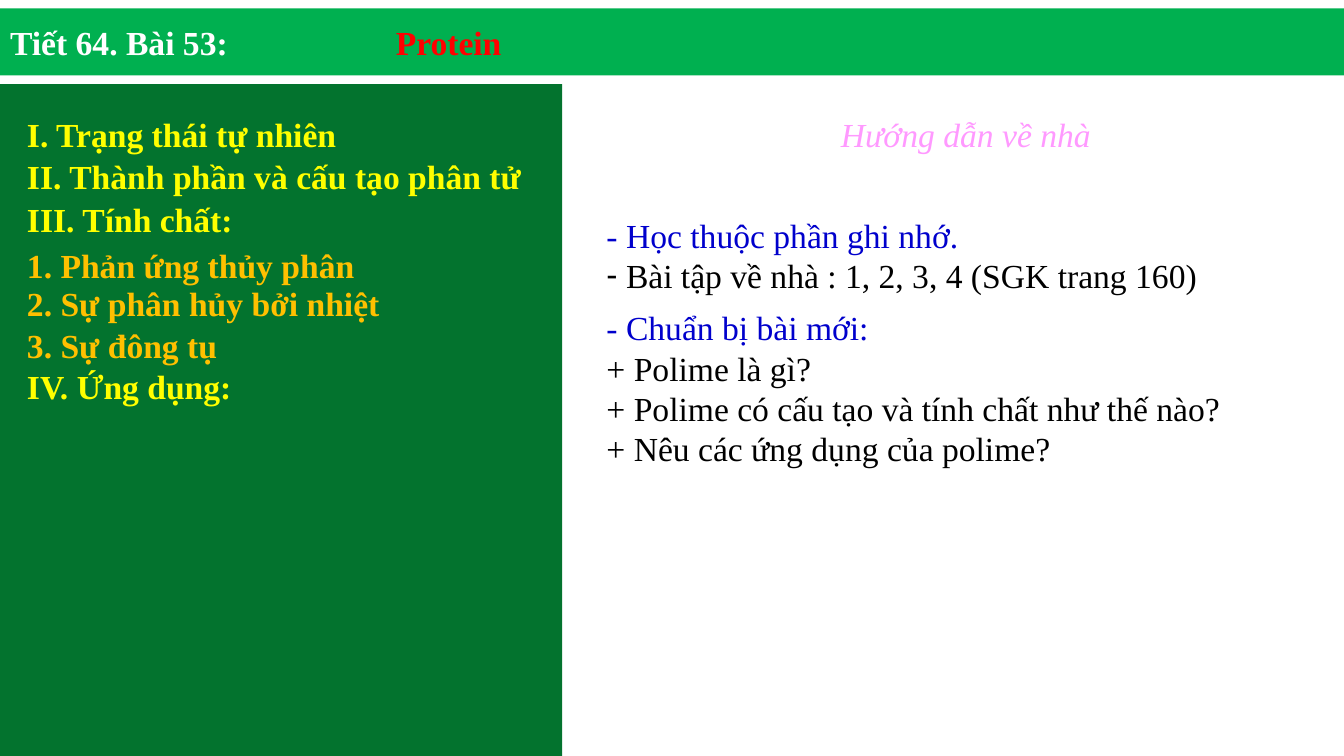
from dataclasses import dataclass
from lxml.etree import SubElement
from pptx import Presentation
from pptx.dml.color import RGBColor
from pptx.enum.text import MSO_ANCHOR, MSO_AUTO_SIZE, PP_ALIGN
from pptx.oxml import parse_xml
from pptx.oxml.ns import qn
from pptx.util import Cm, Pt


@dataclass(frozen=True)
class Theme:
    font: str = "Times New Roman"
    size: float = 24
    pitch: float = 28.8
    bar: str = "00B050"
    panel: str = "03732E"
    white: str = "FFFFFF"
    red: str = "FF0000"
    yellow: str = "FFFF00"
    amber: str = "FFC000"
    pink: str = "FF99FF"
    rose: str = "FF0066"
    blue: str = "0000CC"
    black: str = "000000"


THEME = Theme()

# Text, colour, distance in points from the line above
TOPICS = [
    ("I. Trạng thái tự nhiên", THEME.yellow, THEME.pitch),
    ("II. Thành phần và cấu tạo phân tử", THEME.yellow, 30.2),
    ("III. Tính chất:", THEME.yellow, 31),
    ("1. Phản ứng thủy phân", THEME.amber, 32.4),
    ("2. Sự phân hủy bởi nhiệt", THEME.amber, 27.4),
    ("3. Sự đông tụ", THEME.amber, 30.2),
    ("IV. Ứng dụng:", THEME.yellow, THEME.pitch),
]
# Text, colour, distance from the line above, bullet
TASKS = [
    ("- Học thuộc phần ghi nhớ.", THEME.blue, THEME.pitch, None),
    (" Bài tập về nhà : 1, 2, 3, 4 (SGK trang 160)", THEME.black, THEME.pitch, "-"),
    ("- Chuẩn bị bài mới:", THEME.blue, 37.4, None),
    ("+ Polime là gì?", THEME.black, THEME.pitch, None),
    ("+ Polime có cấu tạo và tính chất như thế nào?", THEME.black, THEME.pitch, None),
    ("+ Nêu các ứng dụng của polime?", THEME.black, THEME.pitch, None),
]


def write(para, text, color, bold=False, italic=False):
    """Add one formatted run to a paragraph."""
    run = para.add_run()
    run.text = text
    font = run.font
    font.name, font.size = THEME.font, Pt(THEME.size)
    font.bold, font.italic = bold, italic
    font.color.rgb = RGBColor.from_string(color)
    return run


def place(shape, box, fill=None):
    """Move a shape to its box and return its cleared text frame."""
    shape.left, shape.top, shape.width, shape.height = map(Cm, box)
    if fill:
        shape.fill.solid()
        shape.fill.fore_color.rgb = RGBColor.from_string(fill)
    frame = shape.text_frame
    frame.word_wrap = True
    frame.auto_size = MSO_AUTO_SIZE.NONE
    return frame


def fill_list(frame, rows, bold=False):
    """Write rows of text, one paragraph each."""
    frame.vertical_anchor = MSO_ANCHOR.TOP
    for i, (text, color, pitch, *mark) in enumerate(rows):
        para = frame.add_paragraph() if i else frame.paragraphs[0]
        para.alignment = PP_ALIGN.LEFT
        para.space_before = Pt(0)
        para.line_spacing = Pt(pitch)
        props = para._p.get_or_add_pPr()
        props.set("marL", "0")
        props.set("indent", "0")
        if any(mark):
            SubElement(props, qn("a:buChar"), char=mark[0])
        else:
            SubElement(props, qn("a:buNone"))
        write(para, text, color, bold=bold)


def add_bar(shape, box):
    """Title bar, with the topic set at a tab stop."""
    frame = place(shape, box, THEME.bar)
    frame.vertical_anchor = MSO_ANCHOR.MIDDLE
    para = frame.paragraphs[0]
    para.alignment = PP_ALIGN.LEFT
    tabs = SubElement(para._p.get_or_add_pPr(), qn("a:tabLst"))
    SubElement(tabs, qn("a:tab"), pos=str(Cm(9.72)), algn="l")
    write(para, "Tiết 64. Bài 53:\t", THEME.white, bold=True)
    write(para, "Protein", THEME.red, bold=True)


def add_panel(shape, box):
    """Green panel with the lesson outline."""
    frame = place(shape, box, THEME.panel)
    frame.margin_left, frame.margin_top = Cm(0.68), Cm(0.74)
    fill_list(frame, TOPICS, bold=True)


def add_work(slide, shape, box):
    """Homework heading and the tasks below it."""
    left, top, width, height = box
    head = slide.shapes.add_textbox(0, 0, 0, 0)
    frame = place(head, (left + 1.9, top, 14.82, 1.12))
    para = frame.paragraphs[0]
    para.alignment = PP_ALIGN.CENTER
    run = write(para, "Hướng dẫn về nhà", THEME.pink, italic=True)
    # Thin outline on the letters
    line = parse_xml(
        '<a:ln xmlns:a="http://schemas.openxmlformats.org/drawingml/2006/main" '
        f'w="{Pt(0.75)}"><a:solidFill><a:srgbClr val="{THEME.rose}"/>'
        '</a:solidFill></a:ln>')
    run._r.get_or_add_rPr().insert(0, line)
    fill_list(place(shape, (left, top + 2.54, width, height - 2.54)), TASKS)


def main():
    deck = Presentation()
    deck.slide_width, deck.slide_height = Cm(33.87), Cm(19.05)
    slide = deck.slides.add_slide(deck.slide_layouts[3])
    title, left, right = slide.placeholders
    add_bar(title, (0, 0.21, 33.87, 1.69))
    add_panel(left, (0, 2.12, 14.17, 16.93))
    add_work(slide, right, (15.03, 2.74, 18.42, 9.25))
    deck.save("out.pptx")


if __name__ == "__main__":
    main()
